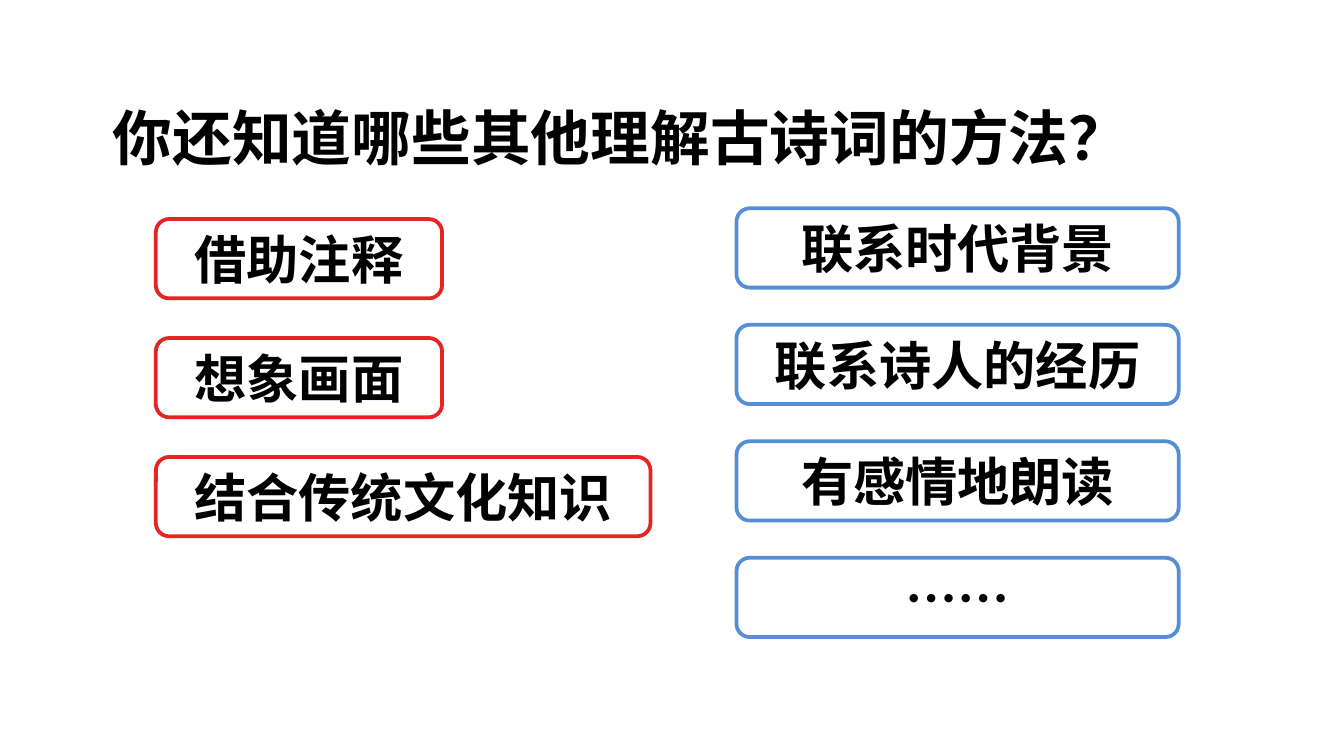
from lxml.etree import SubElement
from pptx import Presentation
from pptx.dml.color import RGBColor
from pptx.enum.shapes import MSO_SHAPE
from pptx.enum.text import MSO_ANCHOR, PP_ALIGN
from pptx.oxml.ns import qn
from pptx.util import Inches, Pt

FONT = "Noto Sans CJK SC"
COLORS = {"text": "000000", "known": "E72424", "further": "558ED5"}
METHOD_HEIGHT = 0.59


def write_bold(paragraph, text, size):
    paragraph.text = text
    for run in paragraph.runs:
        run.font.name = FONT
        run.font.size = Pt(size)
        run.font.bold = True
        run.font.color.rgb = RGBColor.from_string(COLORS["text"])
        # Chinese characters take the East Asian typeface
        SubElement(run.font._element, qn("a:ea"), typeface=FONT)


def add_question(slide, left, top, width, height, text):
    question = slide.shapes.add_textbox(
        Inches(left), Inches(top), Inches(width), Inches(height))
    question.text_frame.word_wrap = True
    paragraph = question.text_frame.paragraphs[0]
    paragraph.line_spacing = 1.2
    write_bold(paragraph, text, 32)


def add_methods(slide, left, top, last_top, color, methods):
    """Spread framed methods, given as (text, width), evenly down a column."""
    pitch = (last_top - top) / (len(methods) - 1)
    for row, (text, width) in enumerate(methods):
        method = slide.shapes.add_shape(
            MSO_SHAPE.ROUNDED_RECTANGLE, Inches(left),
            Inches(top + row * pitch), Inches(width), Inches(METHOD_HEIGHT))
        method.shadow.inherit = False
        method.fill.background()
        method.line.color.rgb = RGBColor.from_string(COLORS[color])
        method.line.width = Pt(2)
        frame = method.text_frame
        frame.word_wrap = True
        frame.vertical_anchor = MSO_ANCHOR.MIDDLE
        frame.paragraphs[0].alignment = PP_ALIGN.CENTER
        write_bold(frame.paragraphs[0], text, 28)


def main():
    presentation = Presentation()
    # Widescreen, 16:9
    presentation.slide_width = Inches(10)
    presentation.slide_height = Inches(10 * 9 / 16)
    slide = presentation.slides.add_slide(presentation.slide_layouts[6])

    # Question
    add_question(slide, 0.74, 0.59, 8.27, 0.75,
                 "你还知道哪些其他理解古诗词的方法？")

    # Methods already known
    add_methods(slide, 1.16, 1.63, 3.4, "known", [
        ("借助注释", 2.13), ("想象画面", 2.13), ("结合传统文化知识", 3.68)])

    # Further methods
    further = ["联系时代背景", "联系诗人的经历", "有感情地朗读", "……"]
    add_methods(slide, 5.48, 1.55, 4.15, "further",
                [(text, 3.29) for text in further])

    presentation.save("out.pptx")


if __name__ == "__main__":
    main()
